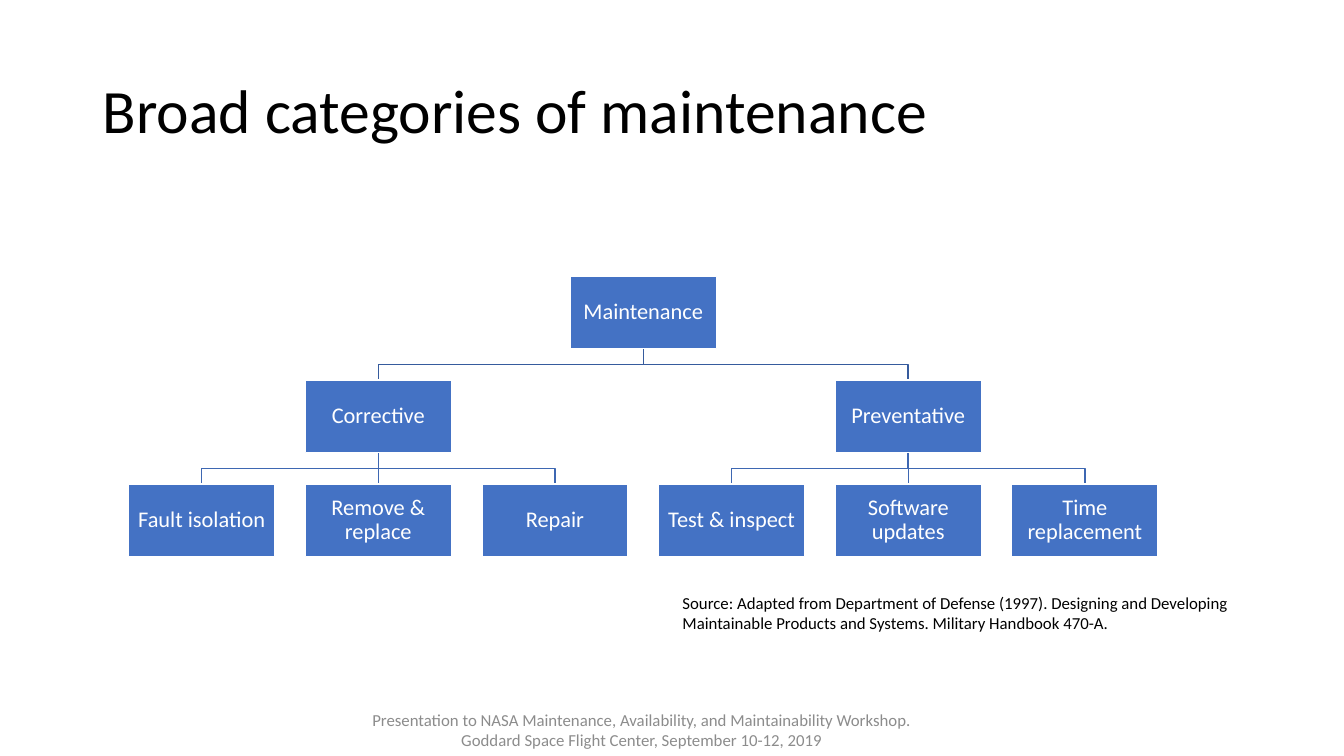
from dataclasses import dataclass

from lxml.etree import SubElement
from pptx import Presentation
from pptx.dml.color import RGBColor as Color
from pptx.enum.shapes import MSO_CONNECTOR as Connector, MSO_SHAPE as Shape
from pptx.enum.text import MSO_ANCHOR as Anchor, MSO_AUTO_SIZE as AutoSize, PP_ALIGN as Align
from pptx.oxml.ns import qn
from pptx.slide import Slide
from pptx.text.text import TextFrame
from pptx.util import Inches, Pt


@dataclass(frozen=True)
class Theme:
    font: str = "Calibri"
    box: str = "4472C4"
    white: str = "FFFFFF"
    black: str = "000000"
    footer: str = "8C8C8C"
    upper_line: str = "365B9D"
    lower_line: str = "3E67B2"
    title_size: int = 44
    box_size: int = 16
    note_size: int = 12
    line_width: int = 1


@dataclass(frozen=True)
class Category:
    name: str
    column: float
    level: int
    children: tuple["Category", ...] = ()


@dataclass(frozen=True)
class Note:
    text: str
    left: float
    top: float
    width: float
    height: float
    color: str
    align: Align
    anchor: Anchor


THEME = Theme()
FIRST_CENTER = 2.0
COLUMN_STEP = 8.76 / 5
TOP = 2.74
LEVEL_STEP = 1.03
BOX_WIDTH = 1.45
BOX_HEIGHT = 0.72

MAINTENANCE = Category("Maintenance", 2.5, 0, (
    Category("Corrective", 1, 1, (
        Category("Fault isolation", 0, 2),
        Category("Remove & replace", 1, 2),
        Category("Repair", 2, 2),
    )),
    Category("Preventative", 4, 1, (
        Category("Test & inspect", 3, 2),
        Category("Software updates", 4, 2),
        Category("Time replacement", 5, 2),
    )),
))

NOTES = (
    Note("Source: Adapted from Department of Defense (1997). Designing and Developing "
         "Maintainable Products and Systems. Military Handbook 470-A.",
         6.67, 5.83, 6.39, 0.5, THEME.black, Align.LEFT, Anchor.TOP),
    Note("Presentation to NASA Maintenance, Availability, and Maintainability Workshop. "
         "Goddard Space Flight Center, September 10-12, 2019",
         3.44, 7.04, 5.85, 0.4, THEME.footer, Align.CENTER, Anchor.MIDDLE),
)


def write(frame: TextFrame, text: str, size: int, color: str, align: Align,
          anchor: Anchor, spacing: float = 1.0) -> None:
    frame.text = text
    frame.word_wrap = True
    frame.auto_size = AutoSize.NONE
    frame.vertical_anchor = anchor
    para = frame.paragraphs[0]
    para.alignment = align
    para.line_spacing = spacing
    font = para.runs[0].font
    font.name = THEME.font
    font.size = Pt(size)
    font.color.rgb = Color.from_string(color)


def center_x(category: Category) -> float:
    return FIRST_CENTER + category.column * COLUMN_STEP


def top_y(category: Category) -> float:
    return TOP + category.level * LEVEL_STEP


def draw_link(slide: Slide, parent: Category, child: Category) -> None:
    start_x, end_x = Inches(center_x(parent)), Inches(center_x(child))
    start_y, end_y = Inches(top_y(parent) + BOX_HEIGHT), Inches(top_y(child))
    if parent.column == child.column:
        link = slide.shapes.add_connector(Connector.STRAIGHT, start_x, start_y, end_x, end_y)
        SubElement(link._element.spPr, qn("a:effectLst"))
    else:
        middle_y = (start_y + end_y) // 2
        outline = slide.shapes.build_freeform(start_x, start_y)
        outline.add_line_segments(
            [(start_x, middle_y), (end_x, middle_y), (end_x, end_y)], close=False)
        link = outline.convert_to_shape()
        link.fill.background()
        link.shadow.inherit = False
    line_color = THEME.lower_line if parent.level else THEME.upper_line
    link.line.color.rgb = Color.from_string(line_color)
    link.line.width = Pt(THEME.line_width)


def draw_links(slide: Slide, parent: Category) -> None:
    for child in parent.children:
        draw_link(slide, parent, child)
        draw_links(slide, child)


def draw_boxes(slide: Slide, category: Category) -> None:
    box = slide.shapes.add_shape(
        Shape.RECTANGLE, Inches(center_x(category) - BOX_WIDTH / 2),
        Inches(top_y(category)), Inches(BOX_WIDTH), Inches(BOX_HEIGHT))
    box.shadow.inherit = False
    box.fill.solid()
    box.fill.fore_color.rgb = Color.from_string(THEME.box)
    box.line.color.rgb = Color.from_string(THEME.white)
    box.line.width = Pt(THEME.line_width)
    frame = box.text_frame
    frame.margin_left = frame.margin_right = Inches(0.01)
    frame.margin_top = frame.margin_bottom = Inches(0.01)
    write(frame, category.name, THEME.box_size, THEME.white, Align.CENTER, Anchor.MIDDLE, 0.9)
    for child in category.children:
        draw_boxes(slide, child)


def draw_note(slide: Slide, note: Note) -> None:
    box = slide.shapes.add_textbox(
        Inches(note.left), Inches(note.top), Inches(note.width), Inches(note.height))
    write(box.text_frame, note.text, THEME.note_size, note.color, note.align, note.anchor)


def draw_title(slide: Slide, text: str) -> None:
    title = slide.shapes.title
    title.left, title.top = Inches(0.92), Inches(0.4)
    title.width, title.height = Inches(11.5), Inches(1.45)
    write(title.text_frame, text, THEME.title_size, THEME.black,
          Align.LEFT, Anchor.MIDDLE, 0.9)


def main() -> None:
    deck = Presentation()
    deck.slide_width, deck.slide_height = Inches(13.33), Inches(7.5)
    page = deck.slides.add_slide(deck.slide_layouts.get_by_name("Title Only"))
    draw_title(page, "Broad categories of maintenance")
    draw_links(page, MAINTENANCE)
    draw_boxes(page, MAINTENANCE)
    for note in NOTES:
        draw_note(page, note)
    deck.save("out.pptx")


if __name__ == "__main__":
    main()
